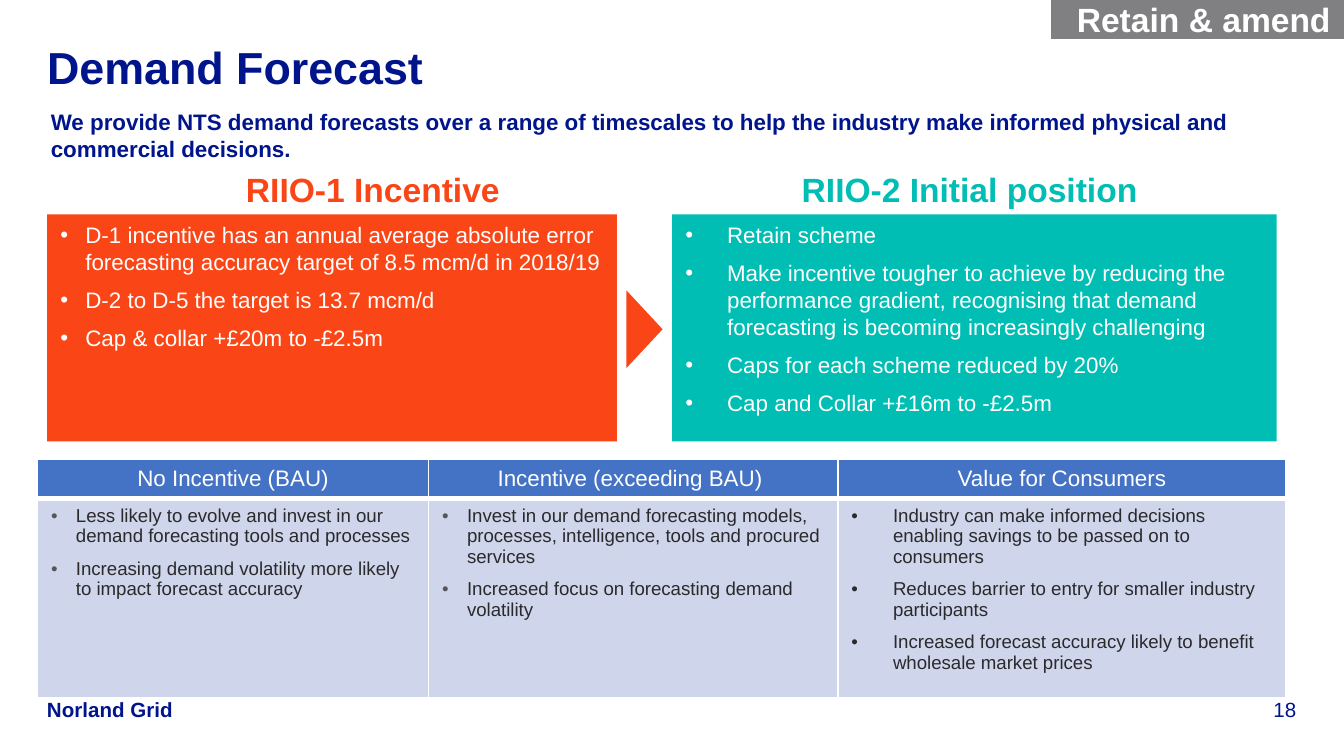
from dataclasses import dataclass

from lxml.etree import SubElement
from pptx import Presentation
from pptx.dml.color import RGBColor as Rgb
from pptx.enum.shapes import MSO_SHAPE as Shape
from pptx.enum.text import MSO_ANCHOR as Anchor, MSO_AUTO_SIZE as AutoSize, PP_ALIGN as Align
from pptx.oxml.ns import qn
from pptx.util import Pt

PX = 4572  # 200 px to the inch


@dataclass(frozen=True)
class Theme:
    font: str = "Arial"
    navy: str = "00148C"
    orange: str = "FA4616"
    teal: str = "00BEB4"
    grey: str = "808083"
    white: str = "FFFFFF"
    header: str = "4472C4"
    cell: str = "CFD5EA"
    ink: str = "2A2A2D"
    bullet: str = "55555A"
    title: int = 24
    heading: int = 18
    body: int = 12
    footer: int = 11
    small: int = 10


THEME = Theme()
NARROW, WIDE = 37, 62  # bullet indents

RIIO_1 = [
    "D-1 incentive has an annual average absolute error forecasting accuracy target of 8.5 mcm/d in 2018/19",
    "D-2 to D-5 the target is 13.7 mcm/d",
    "Cap & collar +£20m to -£2.5m",
]
RIIO_2 = [
    "Retain scheme",
    "Make incentive tougher to achieve by reducing the performance gradient, "
    "recognising that demand forecasting is becoming increasingly challenging",
    "Caps for each scheme reduced by 20%",
    "Cap and Collar +£16m to -£2.5m",
]
# Column heading, width, bullet indent, bullet colour, points
COMPARISON = [
    ("No Incentive (BAU)", 582, NARROW, THEME.bullet, [
        "Less likely to evolve and invest in our demand forecasting tools and processes",
        "Increasing demand volatility more likely to impact forecast accuracy"]),
    ("Incentive (exceeding BAU) ", 609, NARROW, THEME.bullet, [
        "Invest in our demand forecasting models, processes, intelligence, tools and procured services",
        "Increased focus on forecasting demand volatility"]),
    ("Value for Consumers", 667, WIDE, THEME.ink, [
        "Industry can make informed decisions enabling savings to be passed on to consumers",
        "Reduces barrier to entry for smaller industry participants",
        "Increased forecast accuracy likely to benefit wholesale market prices"]),
]


def emu(*lengths):
    return [length * PX for length in lengths]


def paint(part, color):
    part.fill.solid()
    part.fill.fore_color.rgb = Rgb.from_string(color)


def add_bullet(paragraph, indent, color):
    props = paragraph._p.get_or_add_pPr()
    props.set("marL", str(indent * PX))
    props.set("indent", str(-indent * PX))
    SubElement(SubElement(props, qn("a:buClr")), qn("a:srgbClr"), val=color)
    SubElement(props, qn("a:buFont"), typeface=THEME.font)
    SubElement(props, qn("a:buChar"), char="•")


def write(frame, lines, size, color, bold=False, align=Align.LEFT, after=6, bullet=None):
    for number, line in enumerate(lines):
        paragraph = frame.add_paragraph() if number else frame.paragraphs[0]
        paragraph.text = line
        paragraph.alignment = align
        paragraph.space_before, paragraph.space_after = Pt(0), Pt(after)
        if bullet:
            add_bullet(paragraph, *bullet)
        font = paragraph.font
        font.name, font.size, font.bold = THEME.font, Pt(size), bold
        font.color.rgb = Rgb.from_string(color)


def prepare(frame, anchor=Anchor.TOP, inset=(20, 10)):
    frame.word_wrap = True
    frame.auto_size = AutoSize.NONE
    frame.vertical_anchor = anchor
    frame.margin_left = frame.margin_right = inset[0] * PX
    frame.margin_top = frame.margin_bottom = inset[1] * PX
    return frame


def move(placeholder, box):
    placeholder.left, placeholder.top, placeholder.width, placeholder.height = emu(*box)


def add_label(slide, box, text, size, color, anchor=Anchor.TOP, inset=(20, 10), **style):
    label = slide.shapes.add_textbox(*emu(*box))
    write(prepare(label.text_frame, anchor, inset), [text], size, color, **style)


def add_block(slide, kind, box, color):
    block = slide.shapes.add_shape(kind, *emu(*box))
    block.shadow.inherit = False
    paint(block, color)
    block.line.fill.background()
    return block


def add_header(slide, box):
    left, top, width, height = box
    # Title and introduction
    move(slide.shapes.title, (left, top, width, 94))
    write(prepare(slide.shapes.title.text_frame, inset=(0, 0)),
          ["Demand Forecast"], THEME.title, THEME.navy, bold=True, after=0)
    add_label(slide, (left - 14, top + 92, width + 68, height - 92),
              "We provide NTS demand forecasts over a range of timescales to help the industry "
              "make informed physical and commercial decisions.",
              THEME.body, THEME.navy, bold=True, after=12)


def add_status(slide, box):
    status = add_block(slide, Shape.RECTANGLE, box, THEME.grey)
    write(prepare(status.text_frame, Anchor.MIDDLE), ["Retain & amend"],
          THEME.heading, THEME.white, bold=True, align=Align.RIGHT, after=4.5)


def add_position(slide, panel, box, heading, heading_width, points, color, indent):
    left, top, width, height = box
    add_label(slide, (left, top, heading_width, 80), heading, THEME.heading, color,
              bold=True, align=Align.CENTER)
    move(panel, (left, top + 77, width, height - 77))
    paint(panel, color)
    write(prepare(panel.text_frame), points, THEME.body, THEME.white,
          bullet=(indent, THEME.white))


def add_arrow(slide, box):
    # The triangle is laid out upright, then turned about its centre
    left, top, width, height = box
    shift = (height - width) // 2
    arrow = add_block(slide, Shape.ISOSCELES_TRIANGLE,
                      (left - shift, top + shift, height, width), THEME.orange)
    arrow.rotation = 90


def style_cell(cell, color, top, bottom):
    props = cell._tc.get_or_add_tcPr()
    for side, points in (("L", 1), ("R", 1), ("T", top), ("B", bottom)):
        border = SubElement(props, qn(f"a:ln{side}"), w=str(Pt(points)))
        SubElement(SubElement(border, qn("a:solidFill")), qn("a:srgbClr"), val=THEME.white)
    paint(cell, color)


def add_comparison(slide, box):
    table = slide.shapes.add_table(2, len(COMPARISON), *emu(*box)).table
    header_height = 59
    table.rows[0].height, table.rows[1].height = emu(header_height, box[3] - header_height)
    for column, (heading, width, indent, bullet_color, points) in enumerate(COMPARISON):
        table.columns[column].width = width * PX
        head, body = table.cell(0, column), table.cell(1, column)
        style_cell(head, THEME.header, 1, 3)
        style_cell(body, THEME.cell, 3, 1)
        write(head.text_frame, [heading], THEME.body, THEME.white, align=Align.CENTER)
        write(body.text_frame, points, THEME.small, THEME.ink, bullet=(indent, bullet_color))


def add_footer(slide, box):
    left, top, width, height = box
    for x, w, text, bold, align in ((left, 200, "Norland Grid", True, Align.LEFT),
                                    (left + width - 116, 116, "18", False, Align.RIGHT)):
        add_label(slide, (x, top, w, height), text, THEME.footer, THEME.navy,
                  Anchor.BOTTOM, (0, 0), bold=bold, align=align, after=0)


def main():
    deck = Presentation()
    deck.slide_width, deck.slide_height = emu(2000, 1125)
    slide = deck.slides.add_slide(deck.slide_layouts[3])
    _, current, proposed = slide.placeholders

    add_footer(slide, (70, 1036, 1859, 38))
    add_header(slide, (70, 59, 1858, 262))
    add_position(slide, current, (70, 242, 848, 415), "RIIO-1 Incentive", 970,
                 RIIO_1, THEME.orange, NARROW)
    add_position(slide, proposed, (1000, 242, 900, 415), "RIIO-2 Initial position ", 900,
                 RIIO_2, THEME.teal, WIDE)
    add_comparison(slide, (56, 683, 1858, 356))
    add_arrow(slide, (932, 432, 54, 116))
    add_status(slide, (1564, 0, 436, 58))
    deck.save("out.pptx")


if __name__ == "__main__":
    main()
